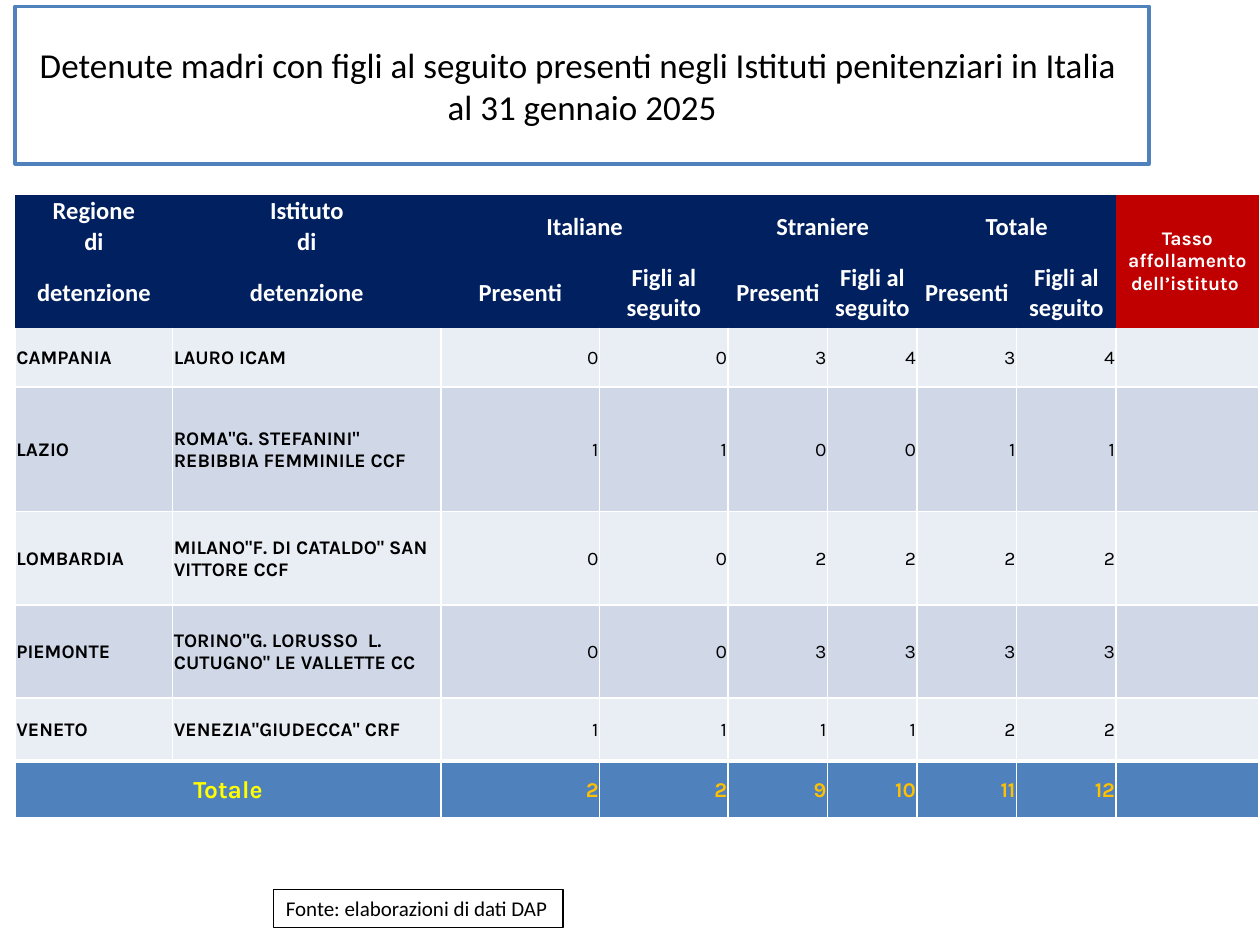
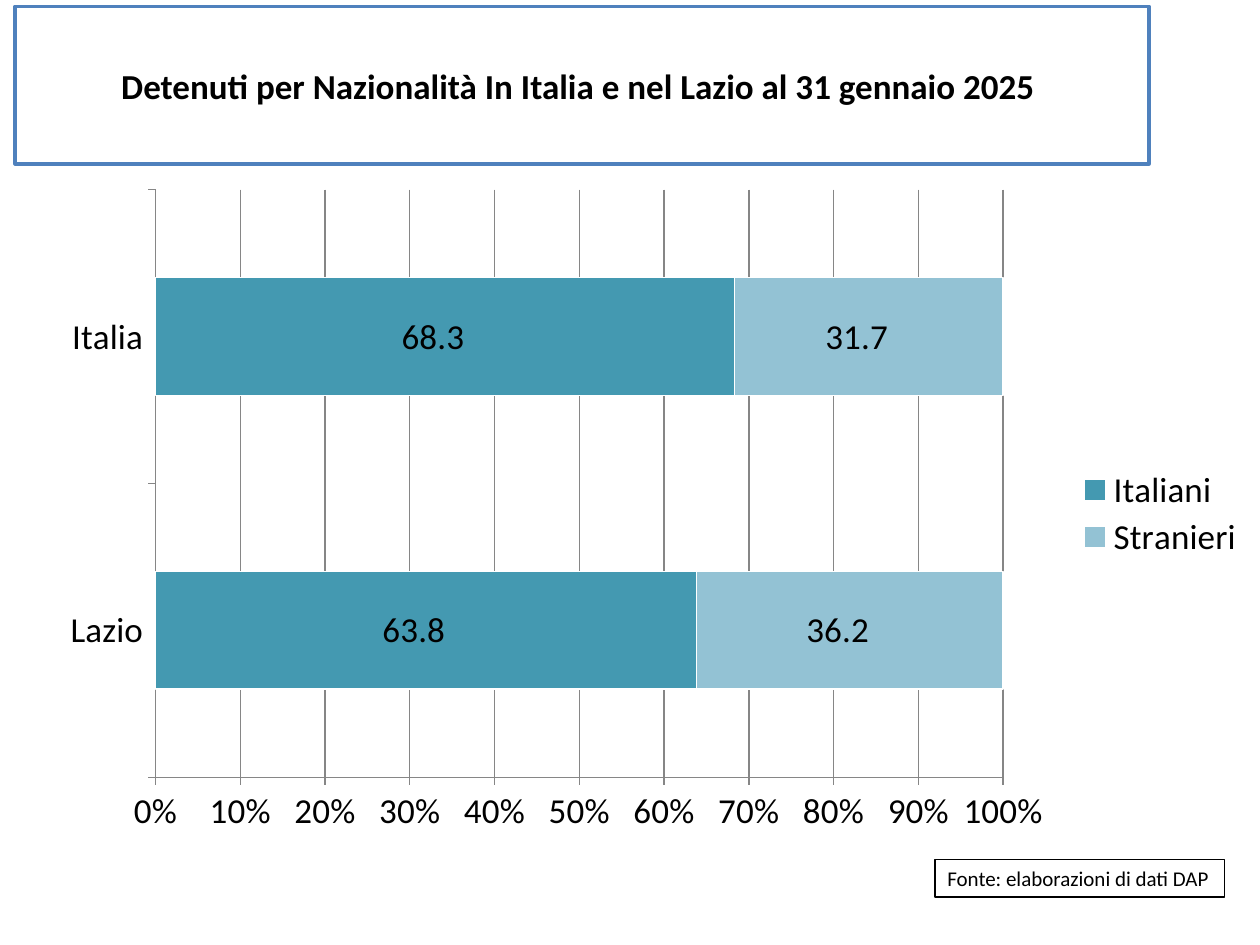
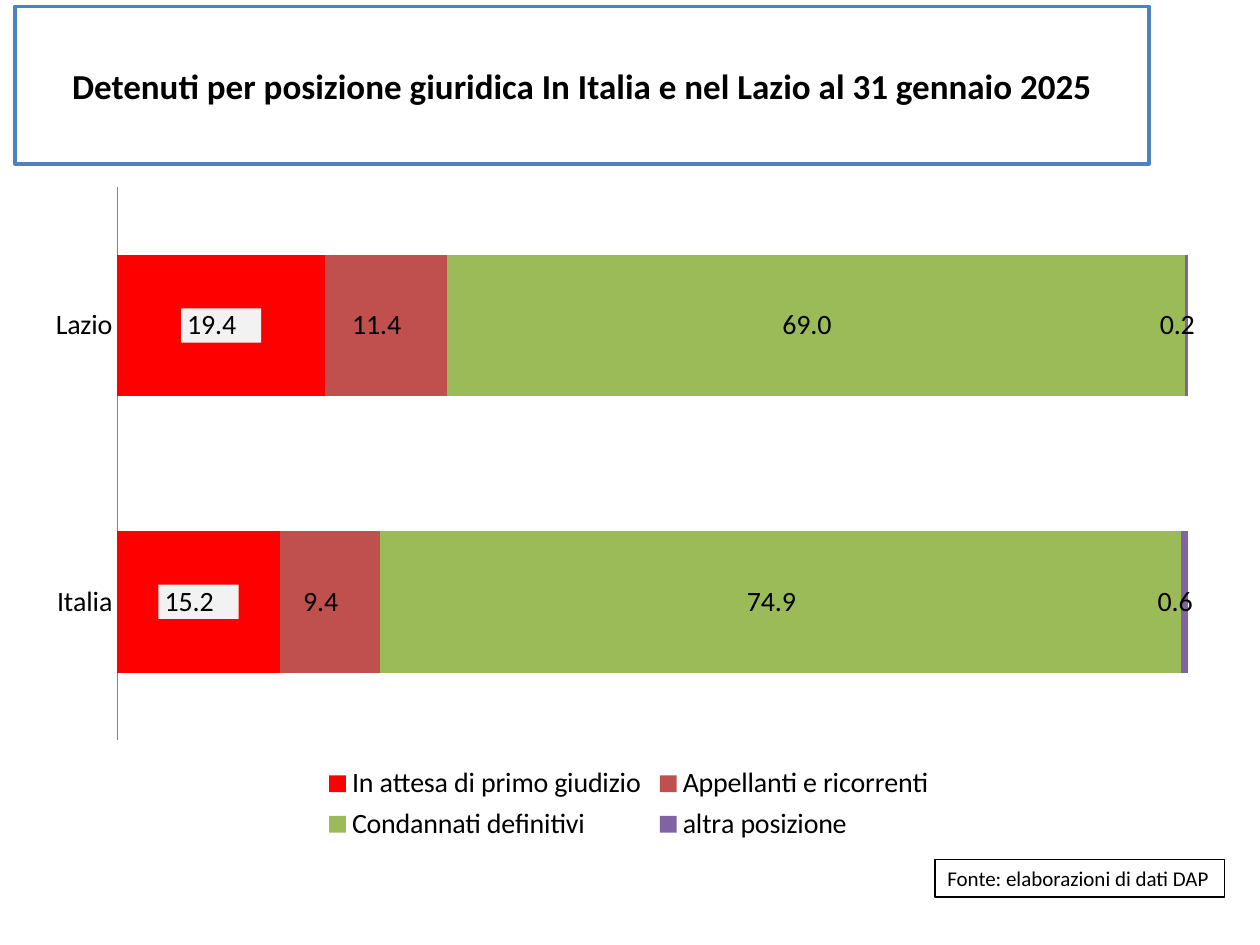
from dataclasses import dataclass

from lxml import etree
from pptx import Presentation
from pptx.chart.data import CategoryChartData
from pptx.dml.color import RGBColor
from pptx.enum.chart import XL_CHART_TYPE, XL_LABEL_POSITION, XL_LEGEND_POSITION, XL_TICK_MARK
from pptx.enum.shapes import MSO_SHAPE
from pptx.enum.text import MSO_ANCHOR, MSO_AUTO_SIZE, PP_ALIGN
from pptx.oxml.ns import qn
from pptx.util import Inches, Pt

LEFT, CENTER, RIGHT = PP_ALIGN.LEFT, PP_ALIGN.CENTER, PP_ALIGN.RIGHT
MIDDLE, TOP = MSO_ANCHOR.MIDDLE, MSO_ANCHOR.TOP
RECTANGLE = MSO_SHAPE.RECTANGLE
STACKED_BARS = XL_CHART_TYPE.BAR_STACKED_100
LEGEND_RIGHT, LEGEND_BOTTOM = XL_LEGEND_POSITION.RIGHT, XL_LEGEND_POSITION.BOTTOM
TICK_OUTSIDE, TICK_NONE = XL_TICK_MARK.OUTSIDE, XL_TICK_MARK.NONE
LABEL_CENTER = XL_LABEL_POSITION.CENTER

BODY_FONT, TABLE_FONT = "Calibri", "Karla"
VALUE_FORMAT = r"_-* #,##0.0\ _€_-;\-* #,##0.0\ _€_-"
SOURCE = "Fonte: elaborazioni di dati DAP"
COLORS = {
    "white": "FFFFFF", "black": "000000", "blue": "4F81BD", "navy": "002060",
    "dark_red": "C00000", "light_band": "E9EDF4", "dark_band": "D0D8E8",
    "yellow": "FFFF00", "gold": "FFC000", "grid": "868686", "label": "F2F2F2",
    "teal": "4499B1", "pale_teal": "93C2D4", "red": "FF0000",
    "brick": "C0504D", "green": "9BBB59", "purple": "8064A2",
}

COLUMN_WIDTHS = [1.25, 2.13, 1.26, 1.02, 0.79, 0.71, 0.79, 0.79, 1.13]
ROW_HEIGHTS = [0.25, 0.25, 0.49, 0.47, 0.99, 0.74, 0.74, 0.5, 0.45]
HEADER_ROWS = 3
GROUPS = ["Italiane", "Straniere", "Totale"]
INSTITUTES = [
    ("CAMPANIA", "LAURO ICAM", 0, 0, 3, 4, 3, 4),
    ("LAZIO", 'ROMA"G. STEFANINI" REBIBBIA FEMMINILE CCF', 1, 1, 0, 0, 1, 1),
    ("LOMBARDIA", 'MILANO"F. DI CATALDO" SAN VITTORE CCF', 0, 0, 2, 2, 2, 2),
    ("PIEMONTE", 'TORINO"G. LORUSSO  L. CUTUGNO" LE VALLETTE CC', 0, 0, 3, 3, 3, 3),
    ("VENETO", 'VENEZIA"GIUDECCA" CRF', 1, 1, 1, 1, 2, 2),
]
TOTALS = [2, 2, 9, 10, 11, 12]


@dataclass
class Box:
    left: float
    top: float
    width: float
    height: float

    def inches(self):
        return [Inches(v) for v in (self.left, self.top, self.width, self.height)]


@dataclass
class BarSeries:
    name: str
    values: tuple
    color: str
    label_fill: str | None = None


@dataclass
class BarChart:
    box: Box
    series: list[BarSeries]
    size: int
    gap: int
    legend: XL_LEGEND_POSITION
    plot_area: Box
    legend_area: Box
    outline: bool = False
    show_scale: bool = False
    reverse: bool = False


TITLE_BOX = Box(0.12, 0.05, 9, 1.25)
TABLE_BOX = Box(0.12, 1.55, 9.87, 4.88)
TABLE_SOURCE_BOX = Box(2.17, 7.06, 2.3, 0.3)
CHART_SOURCE_BOX = Box(7.42, 6.82, 2.3, 0.3)

NATIONALITY = BarChart(
    Box(0.37, 1.4, 9.61, 5.3),
    [BarSeries("Italiani", (63.8, 68.3), "teal"),
     BarSeries("Stranieri", (36.2, 31.7), "pale_teal")],
    size=20, gap=150, legend=LEGEND_RIGHT,
    plot_area=Box(0.09, 0.02, 0.7, 0.88), legend_area=Box(0.85, 0.43, 0.14, 0.15),
    outline=True, show_scale=True,
)
LEGAL_POSITION = BarChart(
    Box(0.27, 1.38, 9.44, 5.35),
    [BarSeries("In attesa di primo giudizio", (19.4, 15.2), "red", "label"),
     BarSeries("Appellanti e ricorrenti", (11.4, 9.4), "brick"),
     BarSeries("Condannati definitivi", (69, 74.9), "green"),
     BarSeries("altra posizione", (0.2, 0.6), "purple")],
    size=16, gap=95, legend=LEGEND_BOTTOM,
    plot_area=Box(0.07, 0.02, 0.9, 0.82), legend_area=Box(0.24, 0.87, 0.52, 0.13),
    reverse=True,
)


def rgb(name: str) -> RGBColor:
    return RGBColor.from_string(COLORS[name])


def paint(fill, color: str) -> None:
    fill.solid()
    fill.fore_color.rgb = rgb(color)


def write_text(text_frame, text: str, *, size: int, color: str = "black",
               font: str = BODY_FONT, bold: bool = False, align=LEFT) -> None:
    paragraph = text_frame.paragraphs[0]
    paragraph.text = text
    paragraph.alignment = align
    for run in paragraph.runs:
        run.font.size = Pt(size)
        run.font.name = font
        run.font.bold = bold
        run.font.color.rgb = rgb(color)


def add_box(slide, box: Box, line: str, line_width: float):
    shape = slide.shapes.add_shape(RECTANGLE, *box.inches())
    shape.shadow.inherit = False
    paint(shape.fill, "white")
    shape.line.color.rgb = rgb(line)
    shape.line.width = Pt(line_width)
    return shape


def add_frame(presentation, title: str, source_box: Box, bold: bool = True):
    slide = presentation.slides.add_slide(presentation.slide_layouts[6])
    title_frame = add_box(slide, TITLE_BOX, "blue", 2).text_frame
    title_frame.word_wrap = True
    title_frame.vertical_anchor = MIDDLE
    write_text(title_frame, title, size=20, bold=bold, align=CENTER)
    source_frame = add_box(slide, source_box, "black", 0.75).text_frame
    source_frame.word_wrap = False
    source_frame.auto_size = MSO_AUTO_SIZE.SHAPE_TO_FIT_TEXT
    source_frame.vertical_anchor = TOP
    write_text(source_frame, SOURCE, size=12)
    return slide


def set_borders(cell, widths: dict[str, float]) -> None:
    properties = cell._tc.get_or_add_tcPr()
    for side in ("L", "R", "T", "B"):
        width = widths.get(side, 0)
        line = etree.SubElement(properties, qn(f"a:ln{side}"), w=str(Pt(width)))
        if width:
            fill = etree.SubElement(line, qn("a:solidFill"))
            etree.SubElement(fill, qn("a:srgbClr"), val=COLORS["white"])
        else:
            etree.SubElement(line, qn("a:noFill"))


def style_cell(cell, row: int, column: int) -> None:
    inset = 0 if row < HEADER_ROWS else 0.01
    cell.margin_left = cell.margin_right = cell.margin_top = Inches(inset)
    cell.margin_bottom = 0
    cell.vertical_anchor = MIDDLE
    if row < HEADER_ROWS:
        set_borders(cell, {})
        color = "dark_red" if column == len(COLUMN_WIDTHS) - 1 else "navy"
    elif row == len(ROW_HEIGHTS) - 1:
        set_borders(cell, {"L": 1, "R": 1, "T": 3, "B": 1})
        color = "blue"
    else:
        below = 3 if row == len(ROW_HEIGHTS) - 2 else 1
        above = 0 if row == HEADER_ROWS else 1
        set_borders(cell, {"L": 1, "R": 1, "T": above, "B": below})
        color = "light_band" if (row - HEADER_ROWS) % 2 == 0 else "dark_band"
    paint(cell.fill, color)


def add_header(table) -> None:
    def label(row: int, column: int, text: str, size: int = 14, font: str = BODY_FONT):
        write_text(table.cell(row, column).text_frame, text, size=size, font=font,
                   color="white", bold=True, align=CENTER)

    for column, heading in enumerate(("Regione", "Istituto")):
        for row, word in enumerate((heading, "di", "detenzione")):
            label(row, column, word)
    for index, group in enumerate(GROUPS):
        column = 2 + 2 * index
        table.cell(0, column).merge(table.cell(1, column + 1))
        label(0, column, group)
        label(2, column, "Presenti")
        label(2, column + 1, "Figli al seguito")
    last = len(COLUMN_WIDTHS) - 1
    table.cell(0, last).merge(table.cell(2, last))
    label(0, last, "Tasso affollamento dell’istituto ", 11, TABLE_FONT)


def add_mothers_table(slide) -> None:
    table = slide.shapes.add_table(len(ROW_HEIGHTS), len(COLUMN_WIDTHS),
                                   *TABLE_BOX.inches()).table
    for column, width in zip(table.columns, COLUMN_WIDTHS):
        column.width = Inches(width)
    for row, height in zip(table.rows, ROW_HEIGHTS):
        row.height = Inches(height)
    for row in range(len(ROW_HEIGHTS)):
        for column in range(len(COLUMN_WIDTHS)):
            style_cell(table.cell(row, column), row, column)
    add_header(table)
    for row, institute in enumerate(INSTITUTES, HEADER_ROWS):
        for column, value in enumerate(institute):
            is_name = column < 2
            write_text(table.cell(row, column).text_frame, str(value), size=11,
                       font=TABLE_FONT, bold=is_name, align=LEFT if is_name else RIGHT)
    total_row = len(ROW_HEIGHTS) - 1
    table.cell(total_row, 0).merge(table.cell(total_row, 1))
    write_text(table.cell(total_row, 0).text_frame, "Totale", size=14, font=TABLE_FONT,
               color="yellow", bold=True, align=CENTER)
    for column, total in enumerate(TOTALS, 2):
        write_text(table.cell(total_row, column).text_frame, str(total), size=12,
                   font=TABLE_FONT, color="gold", bold=True, align=RIGHT)


def place(element, area: Box, index: int, inner: bool = False) -> None:
    for old in element.findall(qn("c:layout")):
        element.remove(old)
    layout = etree.Element(qn("c:layout"))
    manual = etree.SubElement(layout, qn("c:manualLayout"))
    settings = {"layoutTarget": "inner"} if inner else {}
    settings |= {"xMode": "edge", "yMode": "edge", "x": area.left, "y": area.top,
                 "w": area.width, "h": area.height}
    for tag, value in settings.items():
        etree.SubElement(manual, qn(f"c:{tag}"), val=str(value))
    element.insert(index, layout)


def style_series(series, design: BarSeries, outline: bool) -> None:
    paint(series.format.fill, design.color)
    if outline:
        series.format.line.color.rgb = rgb("white")
        series.format.line.width = Pt(0.75)
    labels = series.data_labels
    labels.show_value = True
    labels.number_format = VALUE_FORMAT
    labels.number_format_is_linked = False
    labels.position = LABEL_CENTER
    if design.label_fill:
        properties = etree.Element(qn("c:spPr"))
        fill = etree.SubElement(properties, qn("a:solidFill"))
        etree.SubElement(fill, qn("a:srgbClr"), val=COLORS[design.label_fill])
        labels._element.find(qn("c:numFmt")).addnext(properties)


def add_bar_chart(slide, design: BarChart) -> None:
    data = CategoryChartData()
    data.categories = ["Lazio", "Italia"]
    for series in design.series:
        data.add_series(series.name, series.values)
    chart = slide.shapes.add_chart(STACKED_BARS, *design.box.inches(), data).chart
    chart.has_title = False
    chart.font.name = BODY_FONT
    chart.font.size = Pt(design.size)
    chart.font.color.rgb = rgb("black")

    plot = chart.plots[0]
    plot.gap_width = design.gap
    plot.overlap = 100
    plot.vary_by_categories = False
    for series, series_design in zip(plot.series, design.series):
        style_series(series, series_design, design.outline)

    tick = TICK_OUTSIDE if design.show_scale else TICK_NONE
    for axis in (chart.category_axis, chart.value_axis):
        axis.major_tick_mark = tick
        axis.minor_tick_mark = TICK_NONE
        axis.format.line.color.rgb = rgb("grid")
    chart.category_axis.reverse_order = design.reverse
    scale = chart.value_axis
    scale.visible = design.show_scale
    scale.has_major_gridlines = design.show_scale
    if design.show_scale:
        scale.major_gridlines.format.line.color.rgb = rgb("grid")
        scale.tick_labels.number_format = "0%"
        scale.tick_labels.number_format_is_linked = False

    chart.has_legend = True
    chart.legend.position = design.legend
    chart.legend.include_in_layout = False
    place(chart.legend._element, design.legend_area, 1)
    place(chart._chartSpace.chart.plotArea, design.plot_area, 0, inner=True)


def main() -> None:
    presentation = Presentation()
    presentation.slide_width = Inches(10)
    presentation.slide_height = Inches(7.5)
    add_mothers_table(add_frame(
        presentation,
        "Detenute madri con figli al seguito presenti negli Istituti penitenziari in Italia \n"
        "al 31 gennaio 2025",
        TABLE_SOURCE_BOX, bold=False))
    add_bar_chart(add_frame(
        presentation, "Detenuti per Nazionalità In Italia e nel Lazio al 31 gennaio 2025 ",
        CHART_SOURCE_BOX), NATIONALITY)
    add_bar_chart(add_frame(
        presentation, "Detenuti per posizione giuridica In Italia e nel Lazio al 31 gennaio 2025",
        CHART_SOURCE_BOX), LEGAL_POSITION)
    presentation.save("out.pptx")


if __name__ == "__main__":
    main()
